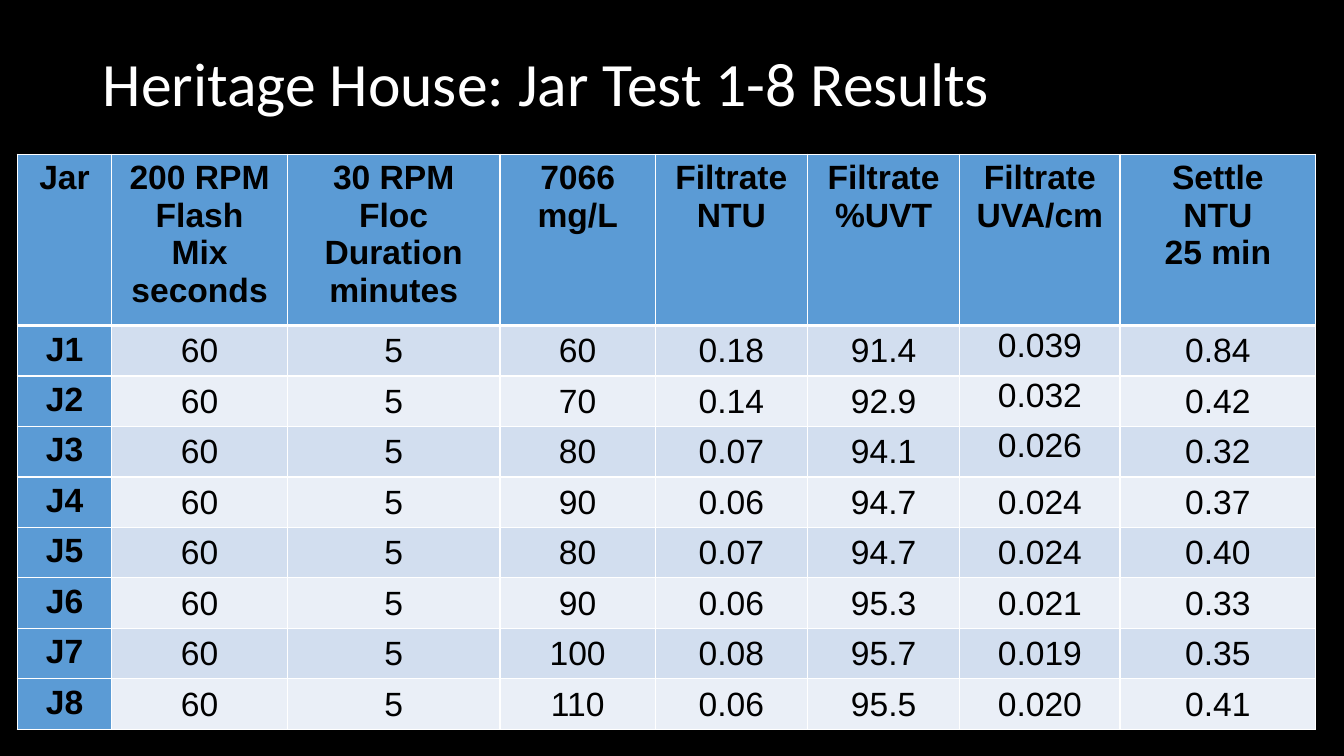
from dataclasses import dataclass

from lxml.etree import SubElement
from pptx import Presentation
from pptx.dml.color import RGBColor
from pptx.enum.text import MSO_ANCHOR as Anchor, PP_ALIGN as Align
from pptx.oxml.ns import qn
from pptx.util import Inches, Pt


@dataclass(frozen=True)
class Theme:
    background: str = "000000"
    title_color: str = "FFFFFF"
    text_color: str = "000000"
    border: str = "FFFFFF"
    accent: str = "5B9BD5"
    bands: tuple = ("D2DEEF", "EAEFF7")
    title_font: str = "Calibri"
    table_font: str = "Arial"
    title_size: int = 44
    table_size: int = 24
    thin: int = 1
    thick: int = 3


THEME = Theme()
TITLE = "Heritage House: Jar Test 1-8 Results"
TITLE_BOX = (0.92, 0.13, 11.5, 1.45)
TABLE_BOX = (0.17, 1.53, 12.88, 5.7)
COLUMN_WIDTHS = (0.94, 1.74, 2.11, 1.54, 1.51, 1.51, 1.59, 1.94)
ROW_HEIGHT = 0.41
UVA_COLUMN = 6
TOP_ALIGNED_UVA_ROWS = (1, 2, 3)
HEADERS = (
    "Jar",
    "200 RPM\nFlash\nMix\nseconds",
    "30 RPM Floc\nDuration\nminutes",
    "7066\nmg/L",
    "Filtrate\nNTU",
    "Filtrate\n%UVT",
    "Filtrate\nUVA/cm",
    "Settle\nNTU\n25 min",
)
JAR_RESULTS = (
    ("J1", "60", "5", "60", "0.18", "91.4", "0.039", "0.84"),
    ("J2", "60", "5", "70", "0.14", "92.9", "0.032", "0.42"),
    ("J3", "60", "5", "80", "0.07", "94.1", "0.026", "0.32"),
    ("J4", "60", "5", "90", "0.06", "94.7", "0.024", "0.37"),
    ("J5", "60", "5", "80", "0.07", "94.7", "0.024", "0.40"),
    ("J6", "60", "5", "90", "0.06", "95.3", "0.021", "0.33"),
    ("J7", "60", "5", "100", "0.08", "95.7", "0.019", "0.35"),
    ("J8", "60", "5", "110", "0.06", "95.5", "0.020", "0.41"),
)


def style_font(font, name, size, color, bold=False):
    font.name = name
    font.size = Pt(size)
    font.bold = bold
    font.color.rgb = RGBColor.from_string(color)


def set_borders(cell, top, bottom):
    properties = cell._tc.get_or_add_tcPr()
    widths = {"a:lnL": THEME.thin, "a:lnR": THEME.thin, "a:lnT": top, "a:lnB": bottom}
    for tag, width in widths.items():
        line = SubElement(properties, qn(tag), w=str(Pt(width)))
        fill = SubElement(line, qn("a:solidFill"))
        SubElement(fill, qn("a:srgbClr"), val=THEME.border)


def fill_cell(cell, text, color, bold):
    cell.fill.solid()
    cell.fill.fore_color.rgb = RGBColor.from_string(color)
    cell.text_frame.text = text
    for para in cell.text_frame.paragraphs:
        para.alignment = Align.CENTER
        for span in para.runs:
            style_font(span.font, THEME.table_font, THEME.table_size, THEME.text_color, bold)


def place_value(cell, anchor):
    cell.vertical_anchor = anchor
    cell.margin_left = cell.margin_right = cell.margin_top = Inches(0.01)
    cell.margin_bottom = 0


def add_title(page, box):
    frame = page.shapes.add_textbox(*map(Inches, box)).text_frame
    frame.word_wrap = True
    frame.vertical_anchor = Anchor.MIDDLE
    frame.text = TITLE
    para = frame.paragraphs[0]
    para.line_spacing = 0.9
    style_font(para.runs[0].font, THEME.title_font, THEME.title_size, THEME.title_color)


def add_results_table(page, box):
    rows = (HEADERS, *JAR_RESULTS)
    holder = page.shapes.add_table(len(rows), len(HEADERS), *map(Inches, box))
    table = holder.table
    table.first_col = True
    for column, width in zip(table.columns, COLUMN_WIDTHS):
        column.width = Inches(width)
    for row in table.rows:
        row.height = Inches(ROW_HEIGHT)
    holder.height = Inches(box[3])

    for r, values in enumerate(rows):
        top = THEME.thick if r == 1 else THEME.thin
        bottom = THEME.thick if r == 0 else THEME.thin
        for c, text in enumerate(values):
            cell = table.cell(r, c)
            heading = r == 0 or c == 0
            set_borders(cell, top, bottom)
            color = THEME.accent if heading else THEME.bands[(r - 1) % 2]
            fill_cell(cell, text, color, heading)
            if not heading:
                raised = c == UVA_COLUMN and r in TOP_ALIGNED_UVA_ROWS
                place_value(cell, Anchor.TOP if raised else Anchor.MIDDLE)


def main():
    deck = Presentation()
    deck.slide_width = Inches(13.33)
    deck.slide_height = Inches(7.5)
    page = deck.slides.add_slide(deck.slide_layouts[6])
    page.background.fill.solid()
    page.background.fill.fore_color.rgb = RGBColor.from_string(THEME.background)
    add_title(page, TITLE_BOX)
    add_results_table(page, TABLE_BOX)
    deck.save("out.pptx")


if __name__ == "__main__":
    main()
